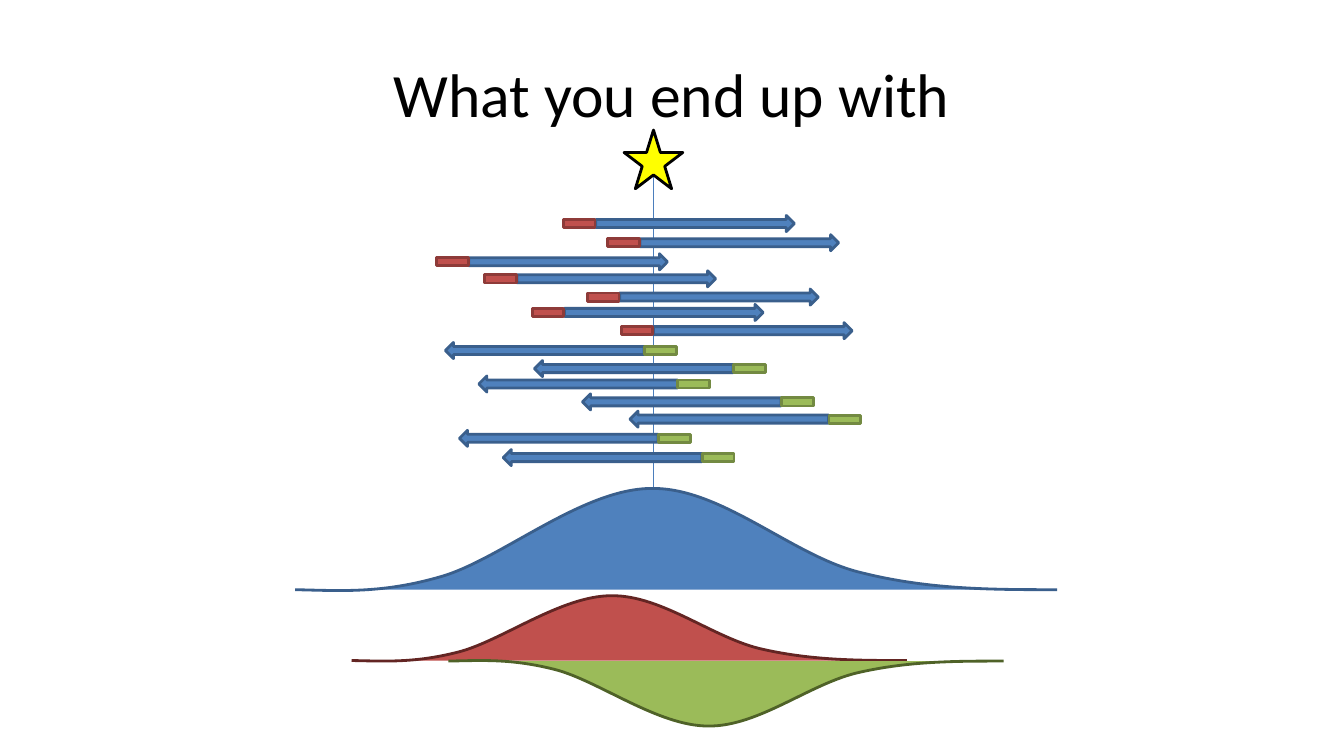
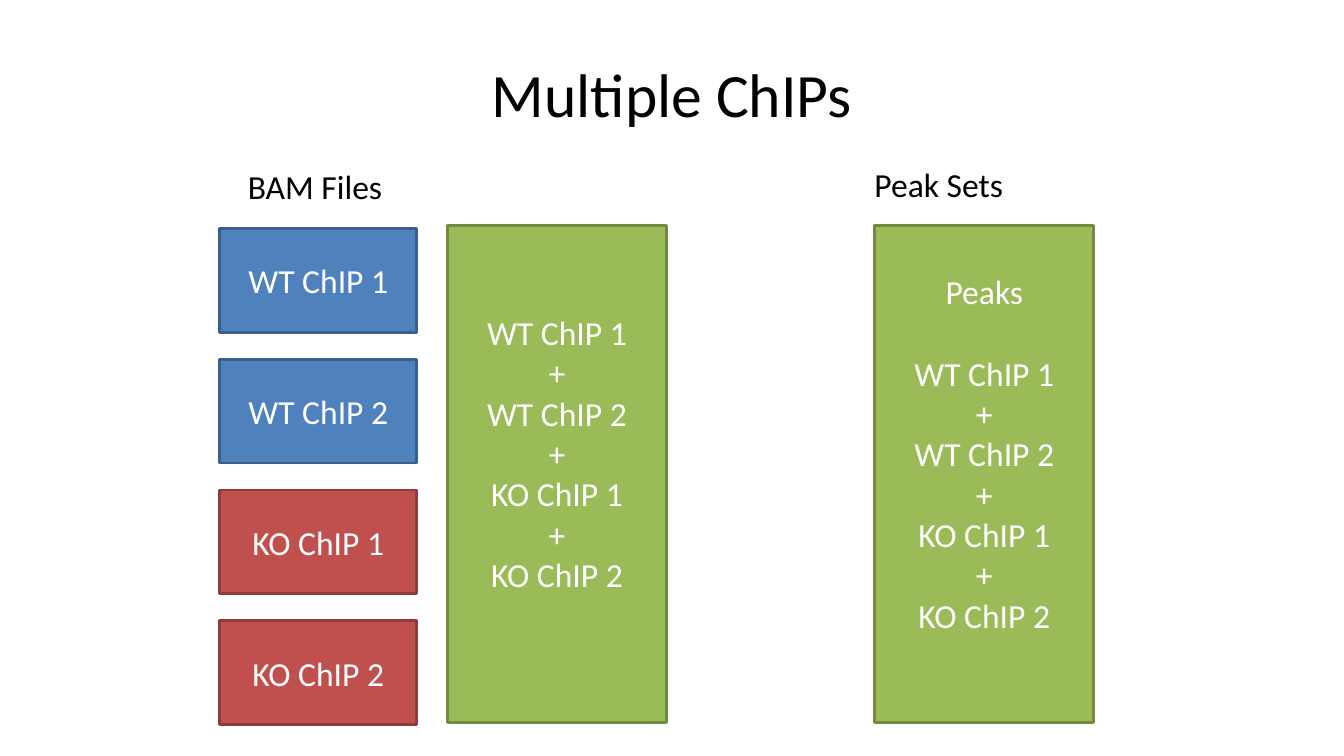
from lxml.etree import SubElement
from pptx import Presentation
from pptx.dml.color import RGBColor
from pptx.enum.shapes import MSO_CONNECTOR, MSO_SHAPE
from pptx.enum.text import MSO_ANCHOR, PP_ALIGN
from pptx.oxml.ns import qn
from pptx.util import Pt

BLACK = RGBColor(0x00, 0x00, 0x00)
WHITE = RGBColor(0xFF, 0xFF, 0xFF)
YELLOW = RGBColor(0xFF, 0xFF, 0x00)
BLUE = RGBColor(0x4F, 0x81, 0xBD)
BLUE_EDGE = RGBColor(0x3A, 0x5F, 0x8C)
BLUE_LINE = RGBColor(0x4B, 0x7E, 0xBC)
RED = RGBColor(0xC0, 0x50, 0x4D)
RED_EDGE = RGBColor(0x8E, 0x3B, 0x39)
RED_DARK = RGBColor(0x63, 0x25, 0x23)
GREEN = RGBColor(0x9B, 0xBB, 0x59)
GREEN_EDGE = RGBColor(0x73, 0x8A, 0x42)
GREEN_DARK = RGBColor(0x4F, 0x62, 0x28)

FONT = "Calibri"
TITLE_SIZE, BODY_SIZE, LINE_HEIGHT = 44, 24, 29.3

# Reads: left end and vertical centre
FORWARD_READS = [(402.5, 159.7), (434.2, 173.4), (311.9, 187), (346.3, 199.2),
                 (419.6, 212.2), (380.2, 223.2), (443.8, 236.2)]
REVERSE_READS = [(318.2, 250.4), (381.8, 263.3), (342, 274.3), (416.1, 287.1),
                 (450, 299.4), (328.2, 313.1), (359.5, 326.9)]
ARROW_WIDTH, ARROW_HEIGHT = 141.9, 11.5
TAG_WIDTH, TAG_HEIGHT = 22.6, 5.8
PEAK_X = 466.8

# Bell curve in percent of width and height: a start, then cubic segments
BELL_START = (0, 0)
BELL_SEGMENTS = [
    ((6.1, -1), (11.4, -4), (19.2, 13)),
    ((27, 30), (37.7, 100), (46.8, 100)),
    ((56, 101), (65.3, 33), (74.2, 17)),
    ((83.1, 0), (91.5, 0), (100, 0)),
]
# Left, baseline, width, height (negative hangs down), fill, line
COVERAGE_CURVES = [
    (210.8, 421.2, 544.3, 72.3, BLUE, BLUE_EDGE),
    (251.1, 471.8, 396.7, 46.3, RED, RED_DARK),
    (320.2, 472.2, 396.7, -46.4, GREEN, GREEN_DARK),
]

BAM_FILES = [("WT ChIP 1", BLUE, BLUE_EDGE), ("WT ChIP 2", BLUE, BLUE_EDGE),
             ("KO ChIP 1", RED, RED_EDGE), ("KO ChIP 2", RED, RED_EDGE)]
HEADINGS = [("BAM Files", 169.9, 115.2, 111.6), ("Peak Sets", 617.5, 113.4, 107.3)]
# Left of each combined box, with an optional heading inside it
COMBINED_BOXES = [(319.7, None), (624.9, "Peaks")]


def write_text(shape, lines, size=BODY_SIZE, color=BLACK, align=PP_ALIGN.LEFT,
               anchor=MSO_ANCHOR.TOP, wrap=True):
    frame = shape.text_frame
    frame.word_wrap = wrap
    frame.vertical_anchor = anchor
    for index, line in enumerate(lines):
        paragraph = frame.paragraphs[0] if index == 0 else frame.add_paragraph()
        paragraph.alignment = align
        run = paragraph.add_run()
        run.text = line
        run.font.name = FONT
        run.font.size = Pt(size)
        run.font.color.rgb = color
    return frame


def add_text_box(slide, text, left, top, width, height, **text_format):
    box = slide.shapes.add_textbox(Pt(left), Pt(top), Pt(width), Pt(height))
    write_text(box, [text], **text_format)


def paint(shape, fill, line):
    shape.shadow.inherit = False
    shape.fill.solid()
    shape.fill.fore_color.rgb = fill
    shape.line.color.rgb = line
    shape.line.width = Pt(2)


def add_filled_shape(slide, kind, left, top, width, height, fill, line):
    shape = slide.shapes.add_shape(kind, Pt(left), Pt(top), Pt(width), Pt(height))
    paint(shape, fill, line)
    return shape


def add_labelled_box(slide, lines, left, top, width, height, fill, line):
    box = add_filled_shape(slide, MSO_SHAPE.RECTANGLE, left, top, width, height, fill, line)
    return write_text(box, lines, color=WHITE, align=PP_ALIGN.CENTER,
                      anchor=MSO_ANCHOR.MIDDLE)


def add_titled_slide(presentation, title):
    slide = presentation.slides.add_slide(presentation.slide_layouts[6])
    add_text_box(slide, title, 48, 21.6, 864, 90, size=TITLE_SIZE,
                 align=PP_ALIGN.CENTER, anchor=MSO_ANCHOR.MIDDLE)
    return slide


def add_peak_line(slide):
    line = slide.shapes.add_connector(MSO_CONNECTOR.STRAIGHT, Pt(PEAK_X), Pt(105.8),
                                      Pt(PEAK_X), Pt(394.6))
    line.line.color.rgb = BLUE_LINE
    line.line.width = Pt(0.75)
    SubElement(line._element.spPr, qn("a:effectLst"))


def add_read(slide, left, middle, forward):
    """Draw an arrow with a coloured tag at its tail."""
    if forward:
        kind, arrow_left, tag_left = MSO_SHAPE.RIGHT_ARROW, left + 23, left
        tag_colors = RED, RED_EDGE
    else:
        kind, arrow_left, tag_left = MSO_SHAPE.LEFT_ARROW, left, left + ARROW_WIDTH + 0.3
        tag_colors = GREEN, GREEN_EDGE
    add_filled_shape(slide, kind, arrow_left, middle - ARROW_HEIGHT / 2,
                     ARROW_WIDTH, ARROW_HEIGHT, BLUE, BLUE_EDGE)
    add_filled_shape(slide, MSO_SHAPE.RECTANGLE, tag_left, middle - TAG_HEIGHT / 2,
                     TAG_WIDTH, TAG_HEIGHT, *tag_colors)


def add_coverage_curve(slide, left, baseline, width, height, fill, line):
    """Outline the bell's end points, then bend each straight segment into a cubic."""
    def place(point):
        x, y = point
        return Pt(left + x * width / 100), Pt(baseline - y * height / 100)

    builder = slide.shapes.build_freeform(*place(BELL_START))
    builder.add_line_segments([place(segment[-1]) for segment in BELL_SEGMENTS], close=False)
    curve = builder.convert_to_shape()
    paint(curve, fill, line)

    straight_segments = list(curve._element.iter(qn("a:lnTo")))
    for straight, segment in zip(straight_segments, BELL_SEGMENTS):
        straight.tag = qn("a:cubicBezTo")
        for old_point in list(straight):
            straight.remove(old_point)
        for x, y in map(place, segment):
            SubElement(straight, qn("a:pt"), x=str(x - curve.left), y=str(y - curve.top))


def build_reads_slide(presentation):
    slide = add_titled_slide(presentation, "What you end up with")
    add_peak_line(slide)
    add_filled_shape(slide, MSO_SHAPE.STAR_5_POINT, PEAK_X - 21, 92.9, 42, 42, YELLOW, BLACK)
    for reads, forward in ((FORWARD_READS, True), (REVERSE_READS, False)):
        for left, middle in reads:
            add_read(slide, left, middle, forward)
    for curve in COVERAGE_CURVES:
        add_coverage_curve(slide, *curve)


def build_chips_slide(presentation):
    slide = add_titled_slide(presentation, "Multiple ChIPs")
    for index, (name, fill, line) in enumerate(BAM_FILES):
        add_labelled_box(slide, [name], 157.1, 163.2 + index * 93.4, 140.6, 74.2, fill, line)
    for text, left, top, width in HEADINGS:
        add_text_box(slide, text, left, top, width, 36, wrap=False)

    combined = "\n+\n".join(name for name, _, _ in BAM_FILES).split("\n")
    for left, heading in COMBINED_BOXES:
        lines = [heading] + combined if heading else combined
        frame = add_labelled_box(slide, lines, left, 160.9, 156.4, 355, GREEN, GREEN_EDGE)
        frame.margin_bottom = Pt(3.6 + LINE_HEIGHT)
        if heading:
            frame.paragraphs[0].space_after = Pt(LINE_HEIGHT)


def main():
    presentation = Presentation()
    presentation.slide_width, presentation.slide_height = Pt(960), Pt(540)
    build_reads_slide(presentation)
    build_chips_slide(presentation)
    presentation.save("out.pptx")


if __name__ == "__main__":
    main()
